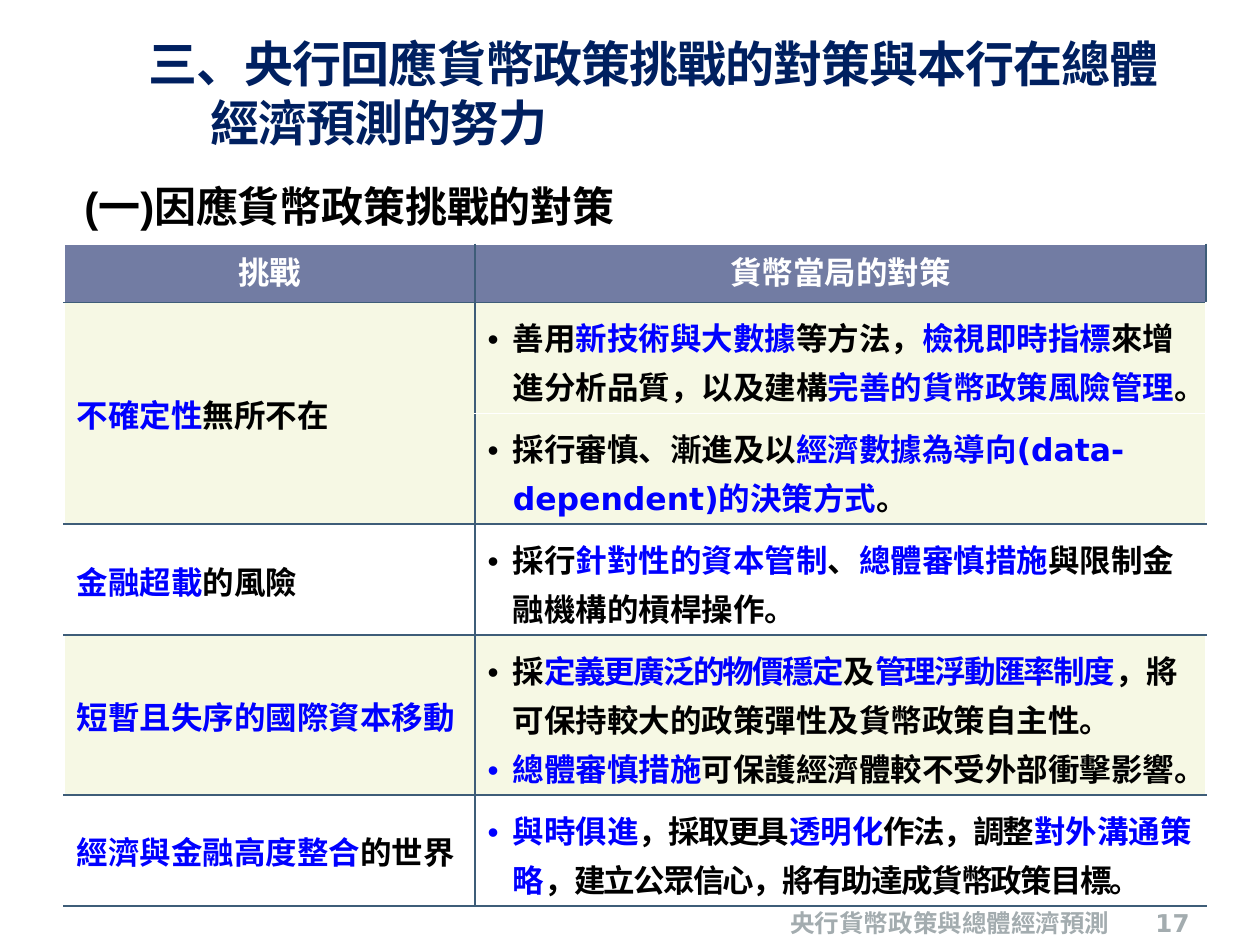
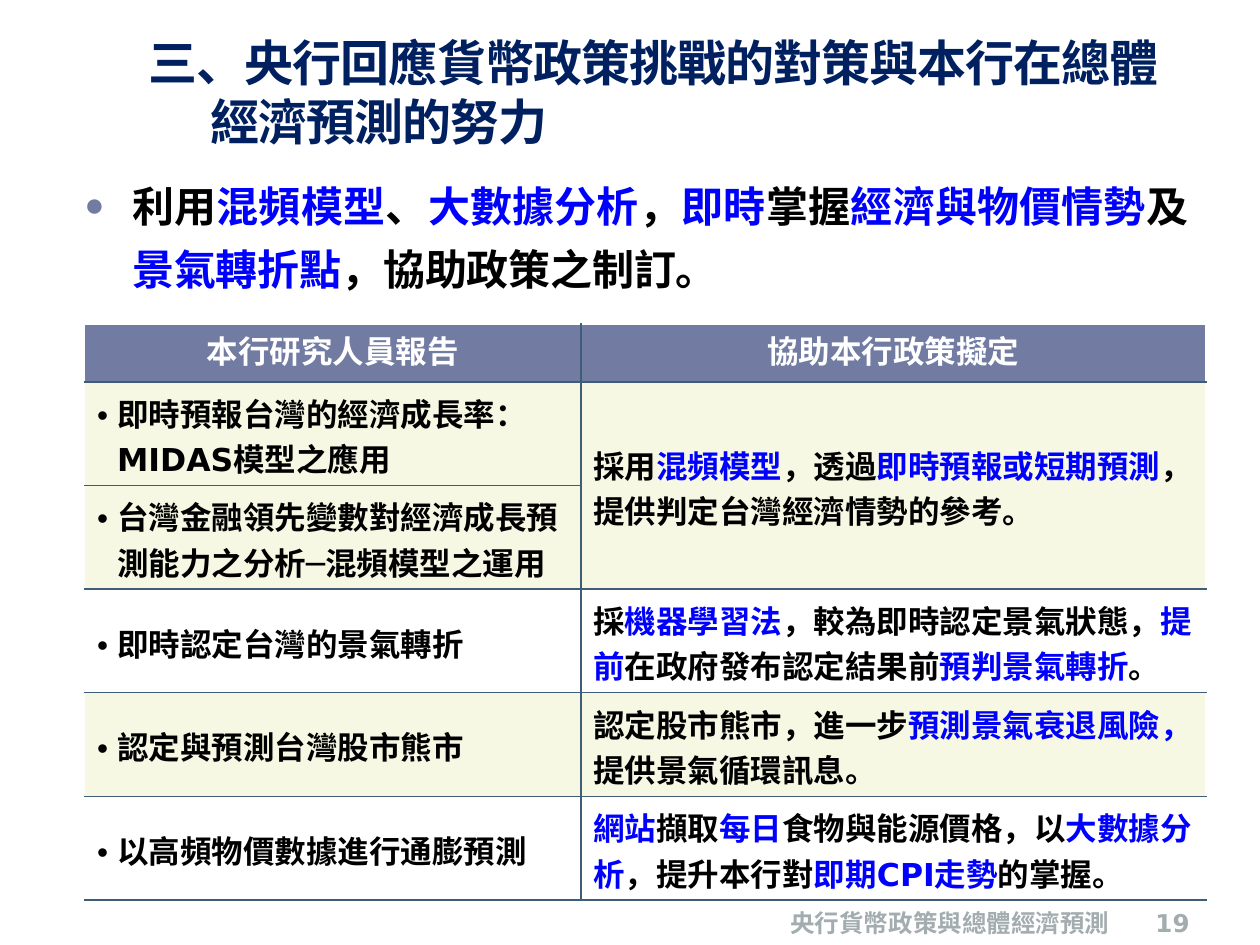
from dataclasses import dataclass

from lxml.etree import SubElement
from pptx import Presentation
from pptx.dml.color import RGBColor
from pptx.enum.text import MSO_ANCHOR, PP_ALIGN
from pptx.oxml.ns import qn
from pptx.util import Inches, Pt


@dataclass(frozen=True)
class Theme:
    navy: str = "002060"
    black: str = "000000"
    blue: str = "0000FF"
    white: str = "FFFFFF"
    grey: str = "A3ACAF"
    header: str = "727CA3"
    band: str = "F6F8E4"
    rule: str = "3E5D78"
    title_size: int = 28
    lead_size: int = 24
    cell_size: int = 18
    footer_size: int = 14
    font: str = "DejaVu Sans"
    lead_font: str = "Arial"


theme = Theme()

TITLE = "三、央行回應貨幣政策挑戰的對策與本行在總體\v經濟預測的努力"
FOOTER = "央行貨幣政策與總體經濟預測"

# In the texts, * switches blue on and off and ~ switches tight spacing
pages = [
    dict(
        number="17", title_top=0.22,
        lead="(一)因應貨幣政策挑戰的對策", lead_bullet=False,
        left=0.51, top=1.94, columns=[3.26, 5.8],
        heights=[0.46, 0.88, 0.88, 0.88, 1.27, 0.88],
        bullet_column=1, hang=0.2, spacing=Pt(28), plain_spacing=1.2,
        merged_column=0, header_edge=theme.rule, inner_rule=theme.white,
        rows=[
            ["挑戰", "貨幣當局的對策"],
            ["*不確定性*無所不在",
             "善用*新技術與大數據*等方法，*檢視即時指標*來增進分析品質，"
             "以及建構*完善的貨幣政策風險管理*。"],
            ["", "採行審慎、漸進及以*經濟數據為導向(data-dependent)的決策方式*。"],
            ["*金融超載*的風險",
             "採行*針對性的資本管制*、*總體審慎措施*與限制金融機構的槓桿操作。"],
            ["*短暫且失序的國際資本移動*",
             "~採*定義更廣泛的物價穩定*及*管理浮動匯率制度*~，"
             "將可保持較大的政策彈性及貨幣政策自主性。\n"
             "*總體審慎措施*可保護經濟體較不受外部衝擊影響。"],
            ["*經濟與金融高度整合*的世界",
             "*與時俱進*~，採取更具~*透明化*~作法，調整~*對外溝通策略*"
             "~，建立公眾信心，將有助達成貨幣政策目標。"],
        ],
    ),
    dict(
        number="19", title_top=0.21,
        lead="利用*混頻模型*、*大數據分析*，*即時*掌握*經濟與物價情勢*及"
             "*景氣轉折點*，協助政策之制訂。",
        lead_bullet=True,
        left=0.67, top=2.57, columns=[3.94, 4.96],
        heights=[0.46] + [0.82] * 5,
        bullet_column=0, hang=0.16, spacing=Pt(26), plain_spacing=Pt(26),
        merged_column=1, header_edge=theme.white, inner_rule=theme.rule,
        rows=[
            ["本行研究人員報告", "協助本行政策擬定"],
            ["即時預報台灣的經濟成長率：MIDAS模型之應用",
             "採用*混頻模型*，透過*即時預報或短期預測*，提供判定台灣經濟情勢的參考。"],
            ["台灣金融領先變數對經濟成長預測能力之分析─混頻模型之運用", ""],
            ["即時認定台灣的景氣轉折",
             "採*機器學習法*，較為即時認定景氣狀態，*提前*在政府發布認定結果前"
             "*預判景氣轉折*。"],
            ["認定與預測台灣股市熊市",
             "認定股市熊市，進一步*預測景氣衰退風險，*提供景氣循環訊息。"],
            ["以高頻物價數據進行通膨預測",
             "*網站*擷取*每日*食物與能源價格，以*大數據分析*，提升本行對"
             "*即期CPI走勢*的掌握。"],
        ],
    ),
]


def write(frame, text, size, color, font=theme.font, align=PP_ALIGN.LEFT,
          spacing=None, hang=0, bullet=None, bullet_color=None, track=0):
    """Fill a text frame, one paragraph per line of marked-up text."""
    for index, line in enumerate(text.split("\n")):
        paragraph = frame.add_paragraph() if index else frame.paragraphs[0]
        paragraph.alignment = align
        if spacing:
            paragraph.line_spacing = spacing
        properties = paragraph._p.get_or_add_pPr()
        if hang:
            properties.set("marL", str(Inches(hang)))
            properties.set("indent", str(-Inches(hang)))
        if bullet:
            if bullet_color:
                tint = SubElement(properties, qn("a:buClr"))
                SubElement(tint, qn("a:srgbClr"), val=bullet_color)
                SubElement(properties, qn("a:buSzPct"), val="80000")
            SubElement(properties, qn("a:buFont"), typeface="Arial")
            SubElement(properties, qn("a:buChar"), char=bullet)
        paragraph.font.size = Pt(size)
        paragraph.font.bold = True
        paragraph.font.name = font
        paragraph.font.color.rgb = RGBColor.from_string(color)
        SubElement(properties.find(qn("a:defRPr")), qn("a:ea"), typeface=font)

        tight = False
        for part_index, part in enumerate(line.split("*")):
            for piece_index, piece in enumerate(part.split("~")):
                if piece_index:
                    tight = not tight
                for break_index, words in enumerate(piece.split("\v")):
                    if break_index:
                        paragraph.add_line_break()
                    if not words:
                        continue
                    run = paragraph.add_run()
                    run.text = words
                    if part_index % 2:
                        run.font.color.rgb = RGBColor.from_string(theme.blue)
                    if tight or track:
                        run._r.get_or_add_rPr().set("spc", "-100" if tight else str(track))


def add_box(slide, left, top, width, height, inset=(0.1, 0.05), anchor=MSO_ANCHOR.TOP):
    """Add a wrapping text box; inset is its left and top margin."""
    frame = slide.shapes.add_textbox(
        Inches(left), Inches(top), Inches(width), Inches(height)).text_frame
    frame.word_wrap = True
    frame.vertical_anchor = anchor
    frame.margin_left, frame.margin_top = map(Inches, inset)
    return frame


deck = Presentation()
deck.slide_width, deck.slide_height = Inches(10), Inches(7.5)

for page in pages:
    slide = deck.slides.add_slide(deck.slide_layouts[6])

    # Title and lead line
    title = add_box(slide, 0.79, page["title_top"], 9.02, 0.94, (0.39, 0.05))
    write(title, TITLE, theme.title_size, theme.navy, hang=0.49, track=-50)
    lead = add_box(slide, 0.47, 1.23, 9.06, 5.92, (0.2, 0.1))
    lead_marks = dict(hang=0.38, bullet="●", bullet_color=theme.header)
    write(lead, page["lead"], theme.lead_size, theme.black, theme.lead_font,
          PP_ALIGN.JUSTIFY, Pt(36), track=-10,
          **(lead_marks if page["lead_bullet"] else {}))

    # Footer and page number
    footer = add_box(slide, 5.79, 7.09, 3.5, 0.4, anchor=MSO_ANCHOR.BOTTOM)
    write(footer, FOOTER, theme.footer_size, theme.grey, align=PP_ALIGN.CENTER)
    number = add_box(slide, 8.94, 7.09, 0.6, 0.4, anchor=MSO_ANCHOR.BOTTOM)
    write(number, page["number"], theme.footer_size, theme.grey, align=PP_ALIGN.RIGHT)

    # Table grid
    rows = page["rows"]
    table = slide.shapes.add_table(
        len(rows), 2, Inches(page["left"]), Inches(page["top"]),
        Inches(sum(page["columns"])), Inches(sum(page["heights"]))).table
    table.first_row = table.horz_banding = False
    for column, width in zip(table.columns, page["columns"]):
        column.width = Inches(width)
    for row, height in zip(table.rows, page["heights"]):
        row.height = Inches(height)
    merged = page["merged_column"]
    table.cell(1, merged).merge(table.cell(2, merged))

    # Table cells: text, rules, then fill
    for r, texts in enumerate(rows):
        for c, text in enumerate(texts):
            cell = table.cell(r, c)
            cell.vertical_anchor = MSO_ANCHOR.MIDDLE
            if r == 0:
                write(cell.text_frame, text, theme.cell_size, theme.white,
                      align=PP_ALIGN.CENTER)
            elif c == page["bullet_column"]:
                write(cell.text_frame, text, theme.cell_size, theme.black,
                      spacing=page["spacing"], hang=page["hang"], bullet="•")
            elif text:
                write(cell.text_frame, text, theme.cell_size, theme.black,
                      spacing=page["plain_spacing"])

            inner = page["inner_rule"] if c != merged else theme.rule
            outer = page["header_edge"] if r == 0 else theme.white
            edges = {
                "a:lnL": theme.rule if c else theme.white,
                "a:lnR": outer if c else theme.rule,
                "a:lnT": {0: theme.white, 2: inner}.get(r, theme.rule),
                "a:lnB": inner if r == 1 else theme.rule,
            }
            for tag, color in edges.items():
                line = SubElement(cell._tc.get_or_add_tcPr(), qn(tag), w=str(Pt(1)))
                SubElement(SubElement(line, qn("a:solidFill")), qn("a:srgbClr"), val=color)

            if r in (0, 1, 2, 4):
                cell.fill.solid()
                cell.fill.fore_color.rgb = RGBColor.from_string(
                    theme.band if r else theme.header)
            else:
                cell.fill.background()

deck.save("out.pptx")
